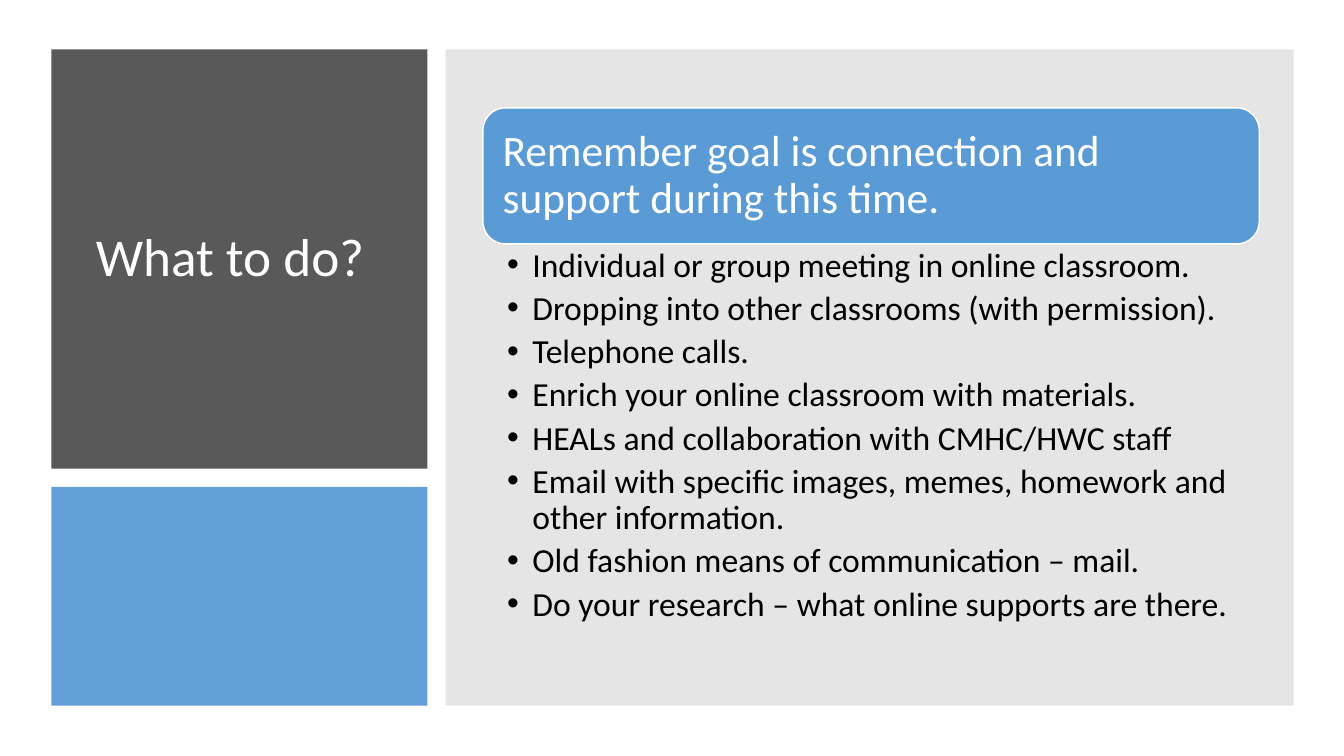
import lxml.etree
import pptx
import pptx.dml.color
import pptx.enum.shapes
import pptx.enum.text
import pptx.oxml.ns
import pptx.util

Inches = pptx.util.Inches
Pt = pptx.util.Pt
RGBColor = pptx.dml.color.RGBColor
Shape = pptx.enum.shapes.MSO_SHAPE
Anchor = pptx.enum.text.MSO_ANCHOR
qn = pptx.oxml.ns.qn

WHITE = RGBColor(0xFF, 0xFF, 0xFF)
BLACK = RGBColor(0, 0, 0)
CHARCOAL = RGBColor(0x59, 0x59, 0x59)
BLUE = RGBColor(0x5B, 0x9B, 0xD5)
GREY = RGBColor(0x80, 0x80, 0x80)

IDEAS = [
    "Individual or group meeting in online classroom.",
    "Dropping into other classrooms (with permission).",
    "Telephone calls.",
    "Enrich your online classroom with materials.",
    "HEALs and collaboration with CMHC/HWC staff",
    "Email with specific images, memes, homework and other information.",
    "Old fashion means of communication – mail.",
    "Do your research – what online supports are there.",
]


def write_text(frame, lines, *, size, color, font="Calibri", anchor=Anchor.MIDDLE,
               insets=(0.1, 0.05), after=0, level=0, bullet=None):
    frame.word_wrap = True
    frame.auto_size = pptx.enum.text.MSO_AUTO_SIZE.NONE
    frame.vertical_anchor = anchor
    frame.margin_left = frame.margin_right = Inches(insets[0])
    frame.margin_top = frame.margin_bottom = Inches(insets[1])
    frame.text = "\n".join(lines)
    for paragraph in frame.paragraphs:
        paragraph.level = level
        paragraph.alignment = pptx.enum.text.PP_ALIGN.LEFT
        paragraph.line_spacing = 0.9
        paragraph.space_before = Pt(0)
        paragraph.space_after = Pt(after)
        paragraph.font.name = font
        paragraph.font.size = Pt(size)
        paragraph.font.color.rgb = color
        if bullet:
            properties = paragraph._p.get_or_add_pPr()
            properties.set("marL", str(Inches(0.25)))
            properties.set("indent", str(Inches(-0.25)))
            defaults = properties.find(qn("a:defRPr"))
            mark = lxml.etree.Element(qn("a:buChar"), char=bullet)
            if defaults is None:
                properties.append(mark)
            else:
                defaults.addprevious(mark)


class SlideBuilder:
    def __init__(self, slide):
        self.slide = slide

    def panel(self, left, top, width, height, color, opacity=100,
              preset=Shape.RECTANGLE, outline=None):
        panel = self.slide.shapes.add_shape(
            preset, Inches(left), Inches(top), Inches(width), Inches(height))
        panel.shadow.inherit = False
        panel.fill.solid()
        panel.fill.fore_color.rgb = color
        if opacity < 100:
            tint = panel.element.spPr.find(qn("a:solidFill"))[0]
            lxml.etree.SubElement(tint, qn("a:alpha"), val=str(opacity * 1000))
        if outline is None:
            panel.line.fill.background()
        else:
            panel.line.color.rgb = outline
            panel.line.width = Pt(1)
        return panel

    def placeholder(self, index, left, top, width, height, lines, **style):
        holder = self.slide.placeholders[index]
        holder.left, holder.top = Inches(left), Inches(top)
        holder.width, holder.height = Inches(width), Inches(height)
        holder.element.getparent().append(holder.element)
        write_text(holder.text_frame, lines, **style)


def main():
    deck = pptx.Presentation()
    deck.slide_width, deck.slide_height = Inches(13.33), Inches(7.5)
    builder = SlideBuilder(deck.slides.add_slide(deck.slide_layouts[1]))

    builder.panel(0.51, 0.49, 3.73, 4.16, CHARCOAL)
    builder.placeholder(0, 0.85, 0.8, 3.11, 3.54, ["What to do?"], size=38, color=WHITE)
    builder.panel(0.51, 4.83, 3.73, 2.17, BLUE, opacity=95)
    builder.panel(4.42, 0.49, 8.41, 6.51, GREY, opacity=20)

    goal = builder.panel(4.79, 1.07, 7.7, 1.35, BLUE,
                         preset=Shape.ROUNDED_RECTANGLE, outline=WHITE)
    write_text(goal.text_frame,
               ["Remember goal is connection and support during this time."],
               size=31, color=WHITE, insets=(0.13, 0.13))
    builder.placeholder(1, 4.79, 2.42, 7.7, 4, IDEAS, size=24, color=BLACK,
                        anchor=Anchor.TOP, insets=(0.24, 0.04), after=5,
                        level=1, bullet="•")
    deck.save("out.pptx")


if __name__ == "__main__":
    main()
